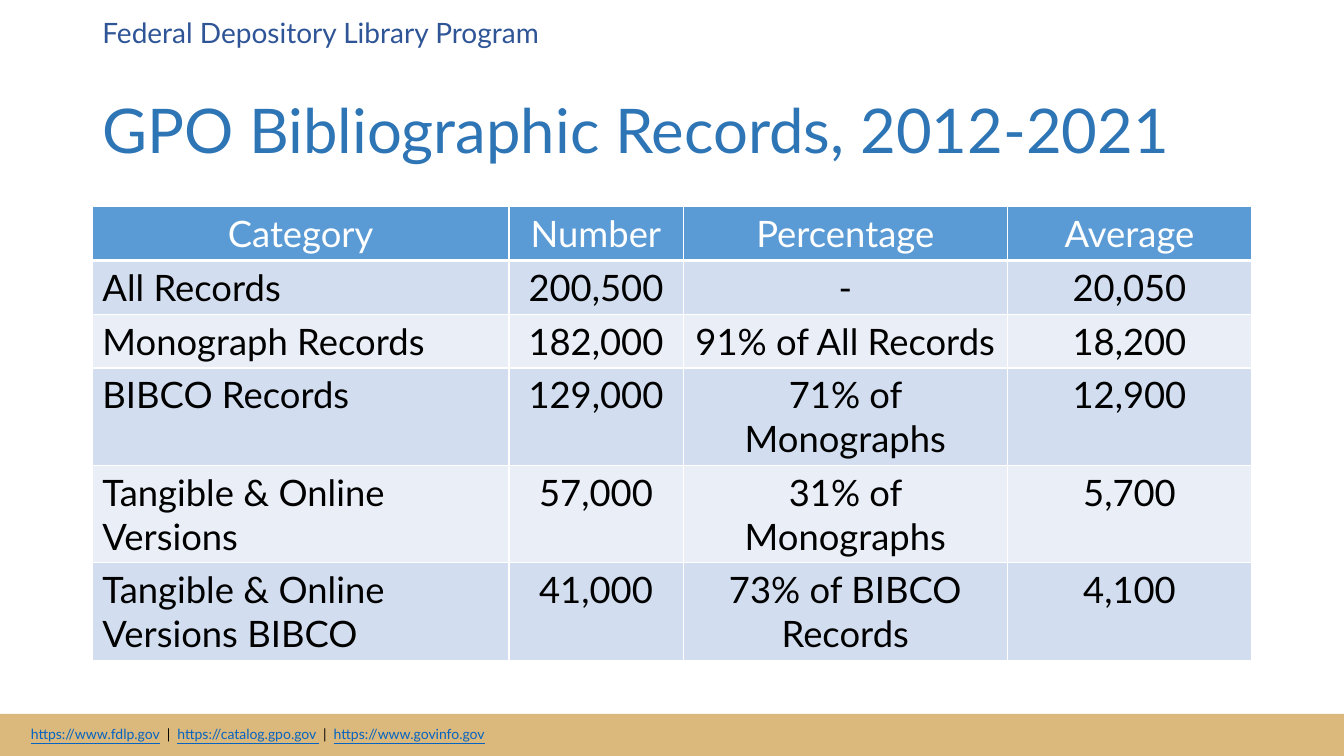
from lxml.etree import SubElement
from pptx import Presentation
from pptx.dml.color import RGBColor
from pptx.enum.shapes import MSO_SHAPE
from pptx.enum.text import MSO_ANCHOR, PP_ALIGN
from pptx.oxml.ns import qn
from pptx.util import Pt

FONT = "Lato"
WHITE = RGBColor(0xFF, 0xFF, 0xFF)
BLACK = RGBColor(0x00, 0x00, 0x00)
TAN = RGBColor(0xDB, 0xB9, 0x7D)
NAVY = RGBColor(0x2F, 0x55, 0x97)
TITLE_BLUE = RGBColor(0x2E, 0x75, 0xB6)
LINK_BLUE = RGBColor(0x05, 0x63, 0xC1)
HEADER_BLUE = RGBColor(0x5B, 0x9B, 0xD5)
BANDS = (RGBColor(0xEA, 0xEF, 0xF7), RGBColor(0xD2, 0xDE, 0xEF))

PAGE_WIDTH, PAGE_HEIGHT = 960, 540
FOOTER_HEIGHT = 30
COLUMN_WIDTHS = (297.6, 124.4, 231.8, 174.2)
SINGLE_ROW, DOUBLE_ROW = 38.2, 69.6
ROW_HEIGHTS = (SINGLE_ROW,) * 3 + (DOUBLE_ROW,) * 3
RECORDS = (
    ("Category", "Number", "Percentage", "Average"),
    ("All Records", "200,500", "-", "20,050"),
    ("Monograph Records", "182,000", "91% of All Records", "18,200"),
    ("BIBCO Records", "129,000", "71% of Monographs", "12,900"),
    ("Tangible & Online Versions", "57,000", "31% of Monographs", "5,700"),
    ("Tangible & Online Versions BIBCO", "41,000", "73% of BIBCO Records", "4,100"),
)
FOOTER_SPANS = (
    ("https://www.fdlp.gov", True),
    ("  |  ", False),
    ("https://catalog.gpo.gov ", True),
    (" |  ", False),
    ("https://www.govinfo.gov", True),
)


def add_span(para, text, *, size, color, underline=False):
    """Append formatted text to a paragraph."""
    span = para.add_run()
    span.text = text
    span.font.name = FONT
    span.font.size = Pt(size)
    span.font.color.rgb = color
    span.font.bold = False
    span.font.underline = underline


def add_text_box(page, box, anchor=MSO_ANCHOR.TOP):
    """Add a wrapping text box and return its first paragraph."""
    frame = page.shapes.add_textbox(*(Pt(length) for length in box)).text_frame
    frame.word_wrap = True
    frame.vertical_anchor = anchor
    return frame.paragraphs[0]


def add_heading(page, box):
    """Place the program name above the slide title."""
    left, top, width, height = box
    program = add_text_box(page, (left, top, 480, 32))
    add_span(program, "Federal Depository Library Program", size=20, color=NAVY)
    title = add_text_box(page, (left, top + 36, width, height - 36), MSO_ANCHOR.MIDDLE)
    title.line_spacing = 0.9
    add_span(title, "GPO Bibliographic Records, 2012-2021", size=44, color=TITLE_BLUE)


def add_cell_borders(cell, bottom_width):
    """Draw white lines on all four sides of a cell."""
    properties = cell._tc.get_or_add_tcPr()
    for side, width in (("L", 1), ("R", 1), ("T", 1), ("B", bottom_width)):
        line = SubElement(properties, qn(f"a:ln{side}"), w=str(Pt(width)))
        fill = SubElement(line, qn("a:solidFill"))
        SubElement(fill, qn("a:srgbClr"), val=str(WHITE))


def add_records_table(page, box):
    """Fill the box with the banded table of record counts."""
    frame = page.shapes.add_table(
        len(RECORDS), len(COLUMN_WIDTHS), *(Pt(length) for length in box)
    )
    table = frame.table
    for column, width in zip(table.columns, COLUMN_WIDTHS):
        column.width = Pt(width)
    for row, height in zip(table.rows, ROW_HEIGHTS):
        row.height = Pt(height)
    for row_index, record in enumerate(RECORDS):
        is_header = row_index == 0
        for column_index, text in enumerate(record):
            cell = table.cell(row_index, column_index)
            add_cell_borders(cell, 3 if is_header else 1)
            cell.fill.solid()
            cell.fill.fore_color.rgb = HEADER_BLUE if is_header else BANDS[row_index % 2]
            para = cell.text_frame.paragraphs[0]
            centered = is_header or column_index > 0
            para.alignment = PP_ALIGN.CENTER if centered else PP_ALIGN.LEFT
            add_span(para, text, size=26, color=WHITE if is_header else BLACK)


def add_footer(page, box):
    """Draw the tan footer band with its web addresses."""
    left, top, width, height = box
    band = page.shapes.add_shape(
        MSO_SHAPE.RECTANGLE, *(Pt(length) for length in box)
    )
    band.shadow.inherit = False
    band.fill.solid()
    band.fill.fore_color.rgb = TAN
    band.line.fill.background()
    para = add_text_box(page, (left + 15, top + 4.5, 502.5, height - 10.5))
    for text, is_address in FOOTER_SPANS:
        color = LINK_BLUE if is_address else BLACK
        add_span(para, text, size=10, color=color, underline=is_address)


def main():
    """Build the slide and save the deck."""
    deck = Presentation()
    deck.slide_width, deck.slide_height = Pt(PAGE_WIDTH), Pt(PAGE_HEIGHT)
    page = deck.slides.add_slide(deck.slide_layouts[6])
    add_footer(page, (0, PAGE_HEIGHT - FOOTER_HEIGHT, PAGE_WIDTH, FOOTER_HEIGHT))
    add_heading(page, (66, 7.2, 828, 140.4))
    add_records_table(page, (66, 147.6, sum(COLUMN_WIDTHS), sum(ROW_HEIGHTS)))
    deck.save("out.pptx")


if __name__ == "__main__":
    main()
